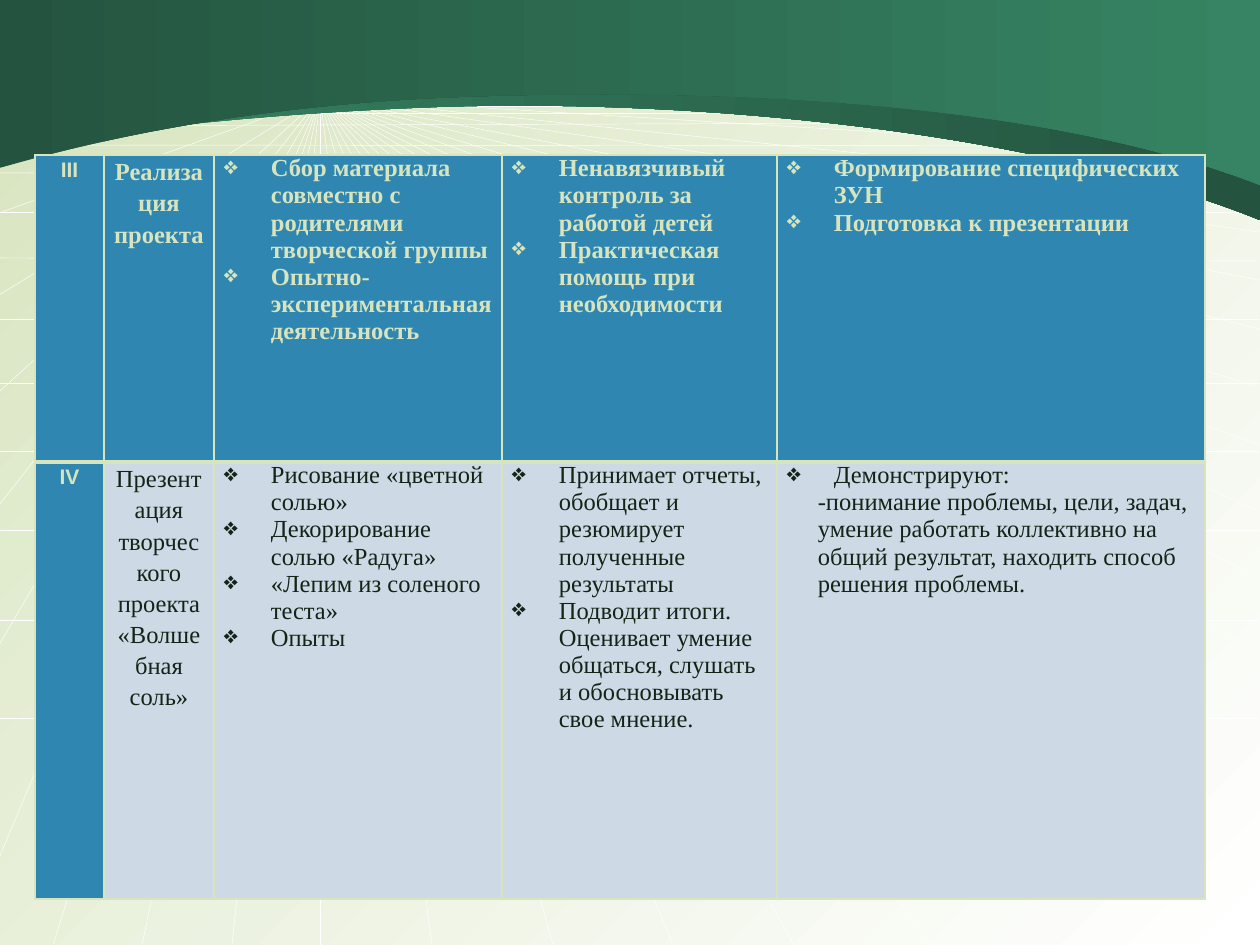
from typing import NamedTuple

from lxml.etree import SubElement
from pptx import Presentation
from pptx.dml.color import RGBColor
from pptx.enum.shapes import MSO_CONNECTOR
from pptx.enum.text import PP_ALIGN
from pptx.oxml.ns import qn
from pptx.util import Emu, Pt

SCALE = 914400 / 126
WIDE, HIGH = 1260, 945
COLORS = {"pale": "D7E4BE", "white": "FFFFFF", "blue": "2F86B1", "gray": "CDD9E4",
          "ink": "152317", "light": "368463", "dark": "24543F"}


class Band(NamedTuple):
    start: tuple
    curves: list  # two control points and an end for each
    stops: tuple


class Item(NamedTuple):
    text: str
    kind: str = "bullet"


class Cell(NamedTuple):
    items: list
    fill: str
    font: str


FONTS = {
    "mark": {"size": Pt(12), "name": "Arial", "bold": True},
    "head": {"size": Pt(14), "name": "Times New Roman", "bold": True},
    "body": {"size": Pt(14), "name": "Times New Roman", "bold": False},
}
INKS = {"mark": "pale", "head": "pale", "body": "ink"}
PARAS = {
    "center": {"alignment": PP_ALIGN.CENTER, "line_spacing": 1.15},
    "bullet": {"alignment": PP_ALIGN.LEFT},
    "plain": {"alignment": PP_ALIGN.LEFT},
}
INDENTS = {"center": (0, 0), "bullet": (47, -47), "plain": (31, 0)}
INSETS = {"center": (10, 10), "bullet": (10, 9)}

# Perspective grid
HUB = (320, 98)
RIGHT = [742, 857, 655, 578, 511, 445, 387, 329, 280, 232, 194, 155, 126]
BOTTOM = [1210, 1066, 930, 794, 673, 553, 432, 320, 232, 142, 53]
LEFT = [858, 645, 505, 392, 295, 213, 146, 146, 122, 98]
LEVELS = [(718, 718), (620, 620), (530, 530), (451, 451), (383, 383), (319, 319),
          (258, 261), (212, 212), (173, 170), (145, 146), (126, 122), (113, 113),
          (106, 106)]

# Curved bands, back to front
BANDS = [
    Band((-1, 150), [((14, 149), (168, 117), (437, 107)),
                     ((707, 98), (1047, 134), (1260, 220))], ("light", "dark")),
    Band((-1, 168), [((14, 165), (190, 107), (459, 97)),
                     ((727, 87), (1047, 102), (1260, 185))], ("dark", "light")),
]

# Table
ORIGIN = (35, 155)
COLS = [69, 110, 288, 275, 428]
ROWS = [307, 437]
CELLS = [
    [
        Cell([Item("III", "center")], "blue", "mark"),
        Cell([Item("Реализация проекта", "center")], "blue", "head"),
        Cell([Item("Сбор материала совместно с родителями творческой группы"),
              Item("Опытно-экспериментальная деятельность")], "blue", "head"),
        Cell([Item("Ненавязчивый контроль за работой детей"),
              Item("Практическая помощь при необходимости")], "blue", "head"),
        Cell([Item("Формирование специфических ЗУН"),
              Item("Подготовка к презентации")], "blue", "head"),
    ],
    [
        Cell([Item("IV", "center")], "blue", "mark"),
        Cell([Item("Презентация творческого проекта «Волшебная соль»", "center")],
             "gray", "body"),
        Cell([Item("Рисование «цветной солью»"), Item("Декорирование солью «Радуга»"),
              Item("«Лепим из соленого теста»"), Item("Опыты")], "gray", "body"),
        Cell([Item("Принимает отчеты, обобщает и резюмирует полученные результаты"),
              Item("Подводит итоги. Оценивает умение общаться, слушать и "
                   "обосновывать свое мнение.")], "gray", "body"),
        Cell([Item("Демонстрируют:"),
              Item("-понимание проблемы, цели, задач,", "plain"),
              Item("умение работать коллективно на общий результат, находить "
                   "способ решения проблемы.", "plain")], "gray", "body"),
    ],
]
EDGES = [{"lnL": 1, "lnR": 1, "lnT": 1, "lnB": 3},
         {"lnL": 1, "lnR": 1, "lnT": 3, "lnB": 1}]


def px(value: float) -> Emu:
    return Emu(round(value * SCALE))


def tint(name: str) -> RGBColor:
    return RGBColor.from_string(COLORS[name])


def apply(target, values: dict) -> None:
    for key, value in values.items():
        setattr(target, key, value)


def blend(fill, names: tuple, angle: int) -> None:
    fill.gradient()
    fill.gradient_angle = angle
    for stop, name in zip(fill.gradient_stops, names):
        stop.color.rgb = tint(name)


def draw_line(slide, start: tuple, end: tuple) -> None:
    line = slide.shapes.add_connector(
        MSO_CONNECTOR.STRAIGHT, *(px(n) for n in (*start, *end)))
    line.line.color.rgb = tint("white")
    line.line.width = Pt(0.25)
    SubElement(line.element.spPr, qn("a:effectLst"))


def bend(shape, count: int) -> None:
    """Turn each of the first groups of three line segments into a curve."""
    sides = list(shape.element.iter(qn("a:lnTo")))
    for first in range(0, 3 * count, 3):
        curve, *rest = sides[first:first + 3]
        curve.tag = qn("a:cubicBezTo")
        for side in rest:
            curve.append(side[0])
            side.getparent().remove(side)


def draw_band(slide, band: Band) -> None:
    form = slide.shapes.build_freeform(*band.start, scale=SCALE)
    for curve in band.curves:
        form.add_line_segments(curve, close=False)
    form.add_line_segments([(WIDE, 0), (-1, 0)], close=True)
    shape = form.convert_to_shape()
    bend(shape, len(band.curves))
    shape.shadow.inherit = False
    blend(shape.fill, band.stops, 0)
    shape.line.fill.background()


def write(para, item: Item, font: str) -> None:
    apply(para, PARAS[item.kind])
    props = para._p.get_or_add_pPr()
    margin, indent = INDENTS[item.kind]
    props.set("marL", str(px(margin)))
    props.set("indent", str(px(indent)))
    if item.kind == "bullet":
        SubElement(props, qn("a:buChar")).set("char", "❖")
    run = para.add_run()
    run.text = item.text
    apply(run.font, FONTS[font])
    run.font.color.rgb = tint(INKS[font])


def fill_cell(box, cell: Cell, edges: dict) -> None:
    left, right = INSETS[cell.items[0].kind]
    apply(box, {"margin_left": px(left), "margin_right": px(right),
                "margin_top": 0, "margin_bottom": 0})
    props = box._tc.get_or_add_tcPr()
    for side, width in edges.items():
        edge = SubElement(props, qn(f"a:{side}"))
        edge.set("w", str(Pt(width)))
        paint = SubElement(edge, qn("a:solidFill"))
        SubElement(paint, qn("a:srgbClr")).set("val", COLORS["pale"])
    box.fill.solid()
    box.fill.fore_color.rgb = tint(cell.fill)
    frame = box.text_frame
    for spot, item in enumerate(cell.items):
        write(frame.add_paragraph() if spot else frame.paragraphs[0], item, cell.font)


def draw_table(slide) -> None:
    frame = slide.shapes.add_table(
        len(ROWS), len(COLS), *(px(n) for n in (*ORIGIN, sum(COLS), sum(ROWS))))
    table = frame.table
    apply(table, {"first_row": False, "horz_banding": False})
    for col, width in zip(table.columns, COLS):
        col.width = px(width)
    for row, height, cells, edges in zip(table.rows, ROWS, CELLS, EDGES):
        row.height = px(height)
        for box, cell in zip(row.cells, cells):
            fill_cell(box, cell, edges)


def main() -> None:
    deck = Presentation()
    apply(deck, {"slide_width": px(WIDE), "slide_height": px(HIGH)})
    slide = deck.slides.add_slide(deck.slide_layouts[6])
    blend(slide.background.fill, ("pale", "white"), -45)
    ends = [(1259, y) for y in RIGHT] + [(x, HIGH) for x in BOTTOM] + [(-1, y) for y in LEFT]
    for end in ends:
        draw_line(slide, HUB, end)
    for near, far in LEVELS:
        draw_line(slide, (-1, near), (1259, far))
    for band in BANDS:
        draw_band(slide, band)
    draw_table(slide)
    deck.save("out.pptx")


if __name__ == "__main__":
    main()
